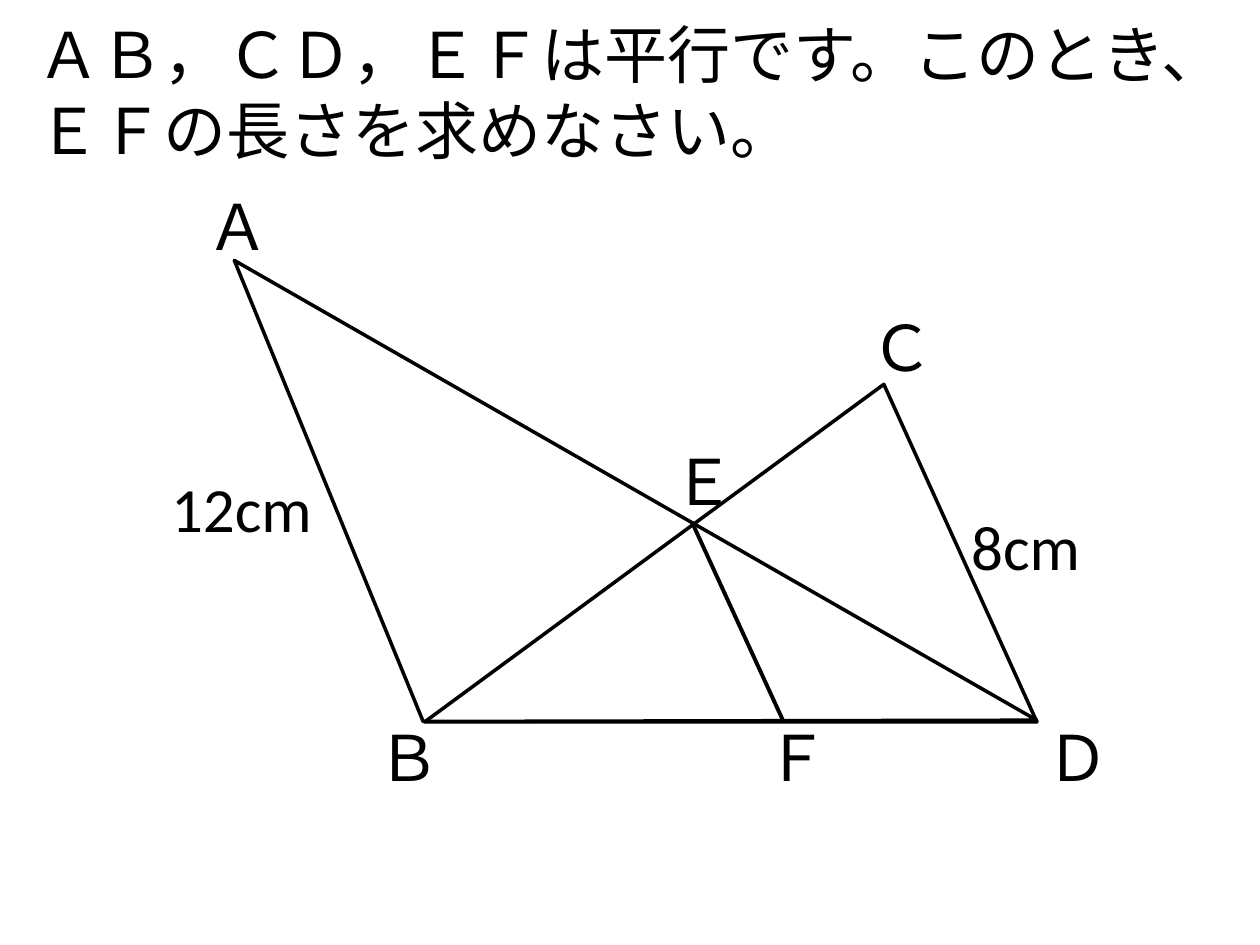
from dataclasses import dataclass

from lxml import etree
from pptx import Presentation
from pptx.dml.color import RGBColor
from pptx.enum.shapes import MSO_CONNECTOR, MSO_SHAPE
from pptx.enum.text import MSO_ANCHOR, MSO_AUTO_SIZE, PP_ALIGN
from pptx.oxml.ns import qn
from pptx.util import Inches, Pt

TRIANGLE = MSO_SHAPE.ISOSCELES_TRIANGLE
STRAIGHT = MSO_CONNECTOR.STRAIGHT
MIDDLE = MSO_ANCHOR.MIDDLE
LEFT = PP_ALIGN.LEFT
FIT_SHAPE = MSO_AUTO_SIZE.SHAPE_TO_FIT_TEXT
NO_FIT = MSO_AUTO_SIZE.NONE
TITLE_ONLY = 5

# The slide is a grid of 100 columns by 75 rows of square cells
COLUMNS, ROWS = 100, 75
CELL = Inches(0.1)


@dataclass(frozen=True)
class Theme:
    ink: RGBColor = RGBColor(0, 0, 0)
    paper: RGBColor = RGBColor(255, 255, 255)
    font: str = "Calibri"
    text_size: float = 36
    side_width: float = 2
    parallel_width: float = 2.25


@dataclass(frozen=True)
class Triangle:
    column: float
    row: float
    columns: float
    rows: float
    apex: float
    rotation: float = 0


@dataclass(frozen=True)
class Label:
    text: str
    column: float
    row: float
    columns: float


THEME = Theme()
TITLE = "ＡＢ，ＣＤ，ＥＦは平行です。このとき、ＥＦの長さを求めなさい。"
LABEL_ROWS = 7.1
BASE_ROW = 56.5

TRIANGLES = [
    Triangle(33.7, 30.5, 48.6, 26.8, 0.75),  # C, B, D
    Triangle(7.7, 37.3, 73.4, 24.3, 0.575, 209.8),  # B, A, D
]
POINT_E, POINT_F = (54.9, 41.4), (62.2, 57.3)
LABELS = [
    Label("Ａ", 15.4, 14.4, 5.6),
    Label("Ｂ", 29, BASE_ROW, 5.9),
    Label("Ｆ", 59.8, BASE_ROW, 5.2),
    Label("Ｅ", 52.4, 34.6, 5.6),
    Label("Ｄ", 82.1, BASE_ROW, 5.8),
    Label("Ｃ", 68.1, 24, 5.8),
    Label("8cm", 76.1, 39.8, 10.7),
    Label("12cm", 12.6, 36.8, 13.3),
]


def cells(count: float) -> int:
    return round(count * CELL)


def write(frame, text: str) -> None:
    para = frame.paragraphs[0]
    para.alignment = LEFT
    span = para.add_run()
    span.text = text
    span.font.name = THEME.font
    span.font.size = Pt(THEME.text_size)
    span.font.color.rgb = THEME.ink


def draw_title(page, text: str) -> None:
    box = page.shapes.title
    box.left, box.top = cells(2), cells(1)
    box.width, box.height = cells(95.3), cells(12.5)
    frame = box.text_frame
    frame.vertical_anchor = MIDDLE
    frame.auto_size = NO_FIT
    write(frame, text)


def draw_triangle(page, triangle: Triangle) -> None:
    shape = page.shapes.add_shape(
        TRIANGLE, cells(triangle.column), cells(triangle.row),
        cells(triangle.columns), cells(triangle.rows))
    shape.adjustments[0] = triangle.apex
    shape.rotation = triangle.rotation
    shape.shadow.inherit = False
    shape.fill.background()
    shape.line.color.rgb = THEME.ink
    shape.line.width = Pt(THEME.side_width)


def draw_segment(page, start: tuple[float, float], end: tuple[float, float]) -> None:
    line = page.shapes.add_connector(
        STRAIGHT, *(cells(value) for value in (*start, *end)))
    line.line.color.rgb = THEME.ink
    line.line.width = Pt(THEME.parallel_width)
    etree.SubElement(line._element.spPr, qn("a:effectLst"))


def draw_label(page, label: Label) -> None:
    box = page.shapes.add_textbox(
        cells(label.column), cells(label.row),
        cells(label.columns), cells(LABEL_ROWS))
    box.text_frame.word_wrap = False
    box.text_frame.auto_size = FIT_SHAPE
    write(box.text_frame, label.text)


def main() -> None:
    deck = Presentation()
    deck.slide_width, deck.slide_height = cells(COLUMNS), cells(ROWS)
    page = deck.slides.add_slide(deck.slide_layouts[TITLE_ONLY])
    page.background.fill.solid()
    page.background.fill.fore_color.rgb = THEME.paper

    # Question
    draw_title(page, TITLE)

    # Two triangles on the shared base BD, and the parallel EF
    for triangle in TRIANGLES:
        draw_triangle(page, triangle)
    draw_segment(page, POINT_E, POINT_F)

    # Names of the points and lengths of the sides
    for label in LABELS:
        draw_label(page, label)

    deck.save("out.pptx")


if __name__ == "__main__":
    main()
